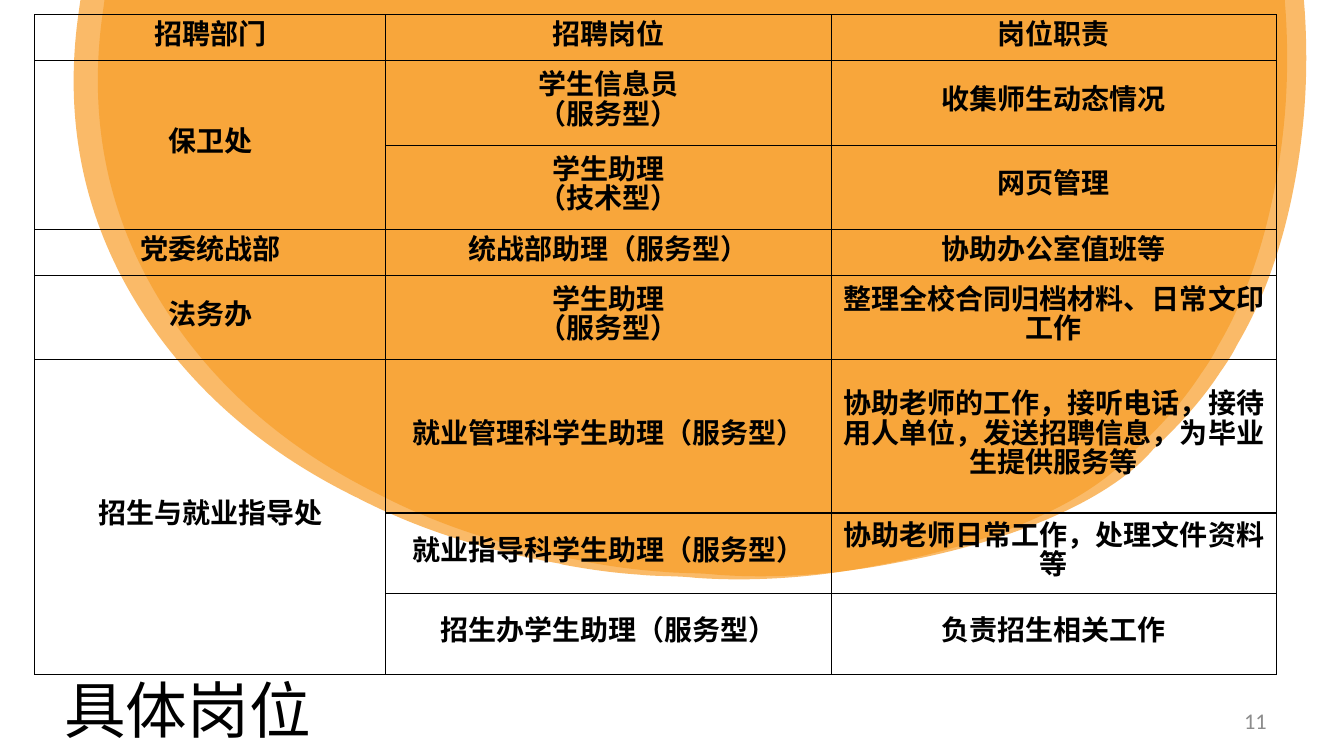
import math
import pptx
import pptx.util
import pptx.dml.color
import pptx.enum.text
import pptx.oxml
import pptx.oxml.ns
from lxml import etree

Pt = pptx.util.Pt
qn = pptx.oxml.ns.qn
ALIGN = pptx.enum.text.PP_ALIGN
ANCHOR = pptx.enum.text.MSO_ANCHOR
COLORS = {"text": "000000", "number": "8C8C8C", "disc": "F89E29", "border": "000000"}
NAMESPACE = pptx.oxml.ns.nsdecls("a")

# Disc outline as seen on the slide: straight corners, then Bézier curves
DISC_ANGLE = 184.9
DISC_CENTER = (474.84, 186.84)
DISC_CORNERS = [(58.3, 0), (918, 0), (918.7, 9.4)]
DISC_CURVES = [
    [(920.2, 33.1), (920.2, 58.3), (918, 83.5)],
    [(912.2, 147.6), (895.7, 204.5), (870.5, 247)],
    [(866.9, 254.2), (863.3, 259.9), (858.2, 267.1)],
    [(844.6, 288), (828, 306), (810, 322.6)],
    [(780.5, 357.8), (710.6, 388.8), (626.4, 403.9)],
    [(579.6, 413.3), (534.2, 415.4), (496.8, 412.6)],
    [(483.8, 411.1), (470.2, 411.8), (457.2, 410.4)],
    [(436.3, 409), (418.3, 406.1), (402.5, 403.2)],
    [(400.3, 402.5), (400.3, 402.5), (400.3, 402.5)],
    [(350.6, 393.8), (302.4, 379.4), (256.3, 355.7)],
    [(201.6, 329), (154.1, 293), (116.6, 243.4)],
    [(61.9, 170.6), (45.4, 91.4), (56.9, 10.1)],
]


def style_paragraph(paragraph, color, font_format, paragraph_format):
    for name, value in paragraph_format.items():
        setattr(paragraph, name, value)
    for name, value in font_format.items():
        setattr(paragraph.font, name, value)
    paragraph.font.color.rgb = pptx.dml.color.RGBColor.from_string(COLORS[color])


def add_disc(slide, frame):
    """Draw the translucent rotated disc, cut off by the top slide edge, in a frame."""
    cosine, sine = (f(math.radians(DISC_ANGLE)) for f in (math.cos, math.sin))
    unrotated = []
    for x, y in DISC_CORNERS + sum(DISC_CURVES, []):
        x, y = x - DISC_CENTER[0], y - DISC_CENTER[1]
        unrotated.append((Pt(cosine * x + sine * y), Pt(cosine * y - sine * x)))
    corner_count = len(DISC_CORNERS)
    anchors = unrotated[:corner_count] + unrotated[corner_count + 2::3]
    left, top = (min(values) for values in zip(*anchors))

    builder = slide.shapes.build_freeform(*anchors[0], scale=1.0)
    builder.add_line_segments(anchors[1:], close=True)
    shape = builder.convert_to_shape()
    lines = list(shape._element.iter(qn("a:lnTo")))[corner_count - 1:]
    for index, line in enumerate(lines):
        first = corner_count + 3 * index
        line.tag = qn("a:cubicBezTo")
        for position, (x, y) in enumerate(unrotated[first:first + 2]):
            line.insert(position, pptx.oxml.parse_xml(
                f'<a:pt {NAMESPACE} x="{x - left}" y="{y - top}"/>'))

    for name, value in zip(("left", "top", "width", "height"), frame):
        setattr(shape, name, Pt(value))
    shape.rotation = DISC_ANGLE
    shape.shadow.inherit = False
    shape.line.fill.background()
    shape.fill.solid()
    shape.fill.fore_color.rgb = pptx.dml.color.RGBColor.from_string(COLORS["disc"])
    color = shape._element.spPr.find(qn("a:solidFill")).find(qn("a:srgbClr"))
    etree.SubElement(color, qn("a:alpha"), val="70000")


presentation = pptx.Presentation()
presentation.slide_width = Pt(960)
presentation.slide_height = Pt(540)
slide = presentation.slides.add_slide(presentation.slide_layouts[6])

# Page number
number_box = slide.shapes.add_textbox(Pt(688), Pt(500.4), Pt(224), Pt(28.8))
number_box.text_frame.word_wrap = True
number_box.text_frame.vertical_anchor = ANCHOR.MIDDLE
number_box.text_frame.text = "11"
style_paragraph(number_box.text_frame.paragraphs[0], "number",
                {"name": "Calibri", "size": Pt(16)}, {"alignment": ALIGN.RIGHT})

# Discs and title
add_disc(slide, (42.5, -37.4, 864.7, 448.6))

title_box = slide.shapes.add_textbox(Pt(38.9), Pt(476.6), Pt(466.6), Pt(60.5))
title_box.text_frame.word_wrap = True
title_box.text_frame.text = "具体岗位"
title = title_box.text_frame.paragraphs[0]
style_paragraph(title, "text", {"size": Pt(44)}, {"alignment": ALIGN.LEFT})
title_font = title.runs[0].font
title_font.name = "Noto Sans CJK SC"
etree.SubElement(title_font._element, qn("a:ea"), typeface="Noto Sans CJK SC")

add_disc(slide, (59.8, -37.4, 861.1, 446.4))

# Job table: an empty department continues the one above
JOBS = [
    ("招聘部门", "招聘岗位", "岗位职责"),
    ("保卫处", "学生信息员\n（服务型）", "收集师生动态情况"),
    ("", "学生助理\n（技术型）", "网页管理"),
    ("党委统战部", "统战部助理（服务型）", "协助办公室值班等"),
    ("法务办", "学生助理\n（服务型）", "整理全校合同归档材料、日常文印工作"),
    ("招生与就业指导处", "就业管理科学生助理（服务型）",
     "协助老师的工作，接听电话，接待用人单位，发送招聘信息，为毕业生提供服务等"),
    ("", "就业指导科学生助理（服务型）", "协助老师日常工作，处理文件资料等"),
    ("", "招生办学生助理（服务型）", "负责招生相关工作"),
]
COLUMN_WIDTHS = [250.6, 318.2, 318.2]
ROW_HEIGHTS = [32.9, 60.2, 60.2, 32.9, 60.2, 109.6, 57.6, 57.6]
table = slide.shapes.add_table(len(JOBS), 3, Pt(24.9), Pt(10.6),
                               Pt(sum(COLUMN_WIDTHS)), Pt(sum(ROW_HEIGHTS))).table
table.first_row = False
table.horz_banding = False
for column, width in zip(table.columns, COLUMN_WIDTHS):
    column.width = Pt(width)
for row, height in zip(table.rows, ROW_HEIGHTS):
    row.height = Pt(height)

for row_index, job in enumerate(JOBS):
    for column_index, text in enumerate(job):
        cell = table.cell(row_index, column_index)
        cell.vertical_anchor = ANCHOR.MIDDLE
        properties = cell._tc.get_or_add_tcPr()
        for side in "LRTB":
            properties.append(pptx.oxml.parse_xml(
                f'<a:ln{side} {NAMESPACE} w="12700"><a:solidFill>'
                f'<a:srgbClr val="{COLORS["border"]}"/></a:solidFill></a:ln{side}>'))
        cell.fill.background()
        if text:
            cell.text = text
            for paragraph in cell.text_frame.paragraphs:
                style_paragraph(paragraph, "text",
                                {"name": "Calibri", "size": Pt(20), "bold": True},
                                {"alignment": ALIGN.CENTER, "line_spacing": Pt(21)})

for first_row, last_row in ((1, 2), (5, 7)):
    table.cell(first_row, 0).merge(table.cell(last_row, 0))

presentation.save("out.pptx")
